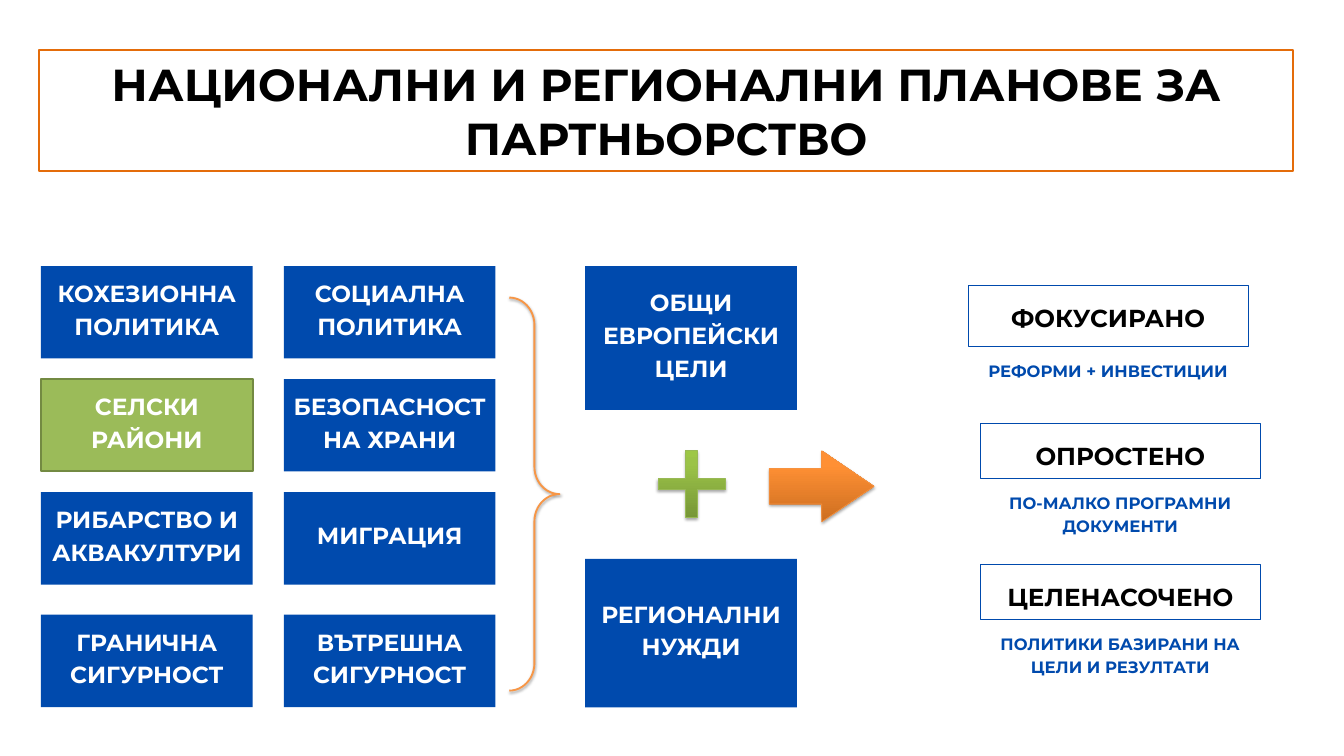
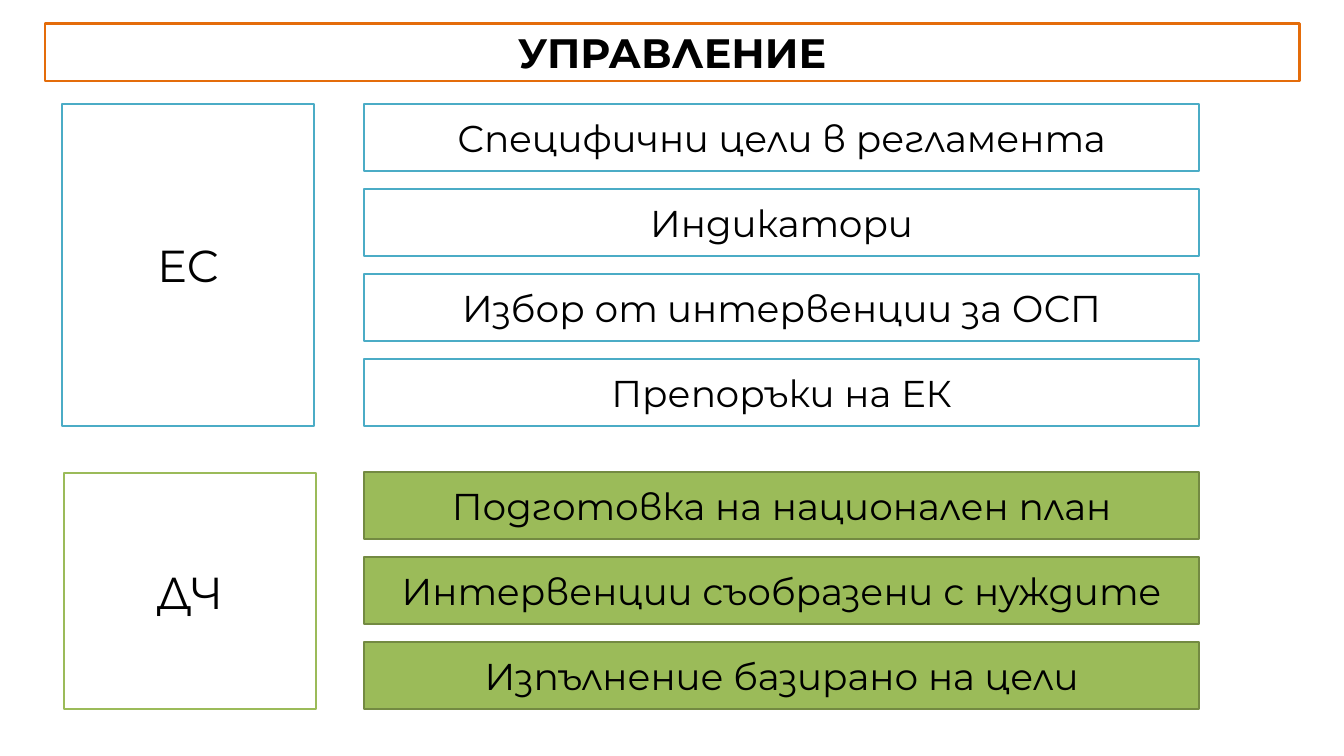
from copy import deepcopy
from dataclasses import dataclass
from typing import Optional

from lxml import etree
from pptx import Presentation
from pptx.dml.color import RGBColor
from pptx.enum import lang, shapes, text
from pptx.oxml.ns import qn
from pptx.util import Cm, Pt


@dataclass(frozen=True)
class TextStyle:
    size: float
    color: str = "000000"
    bold: bool = True
    spacing: Optional[float] = None


class Theme:
    font = "Montserrat"
    white, blue, teal = "FFFFFF", "004AAD", "4BACC6"
    green, dark_green = "9BBB59", "738A42"
    orange, title_border = "F79646", "E46C0A"
    plus_gradient, plus_border = ("779737", "9BC348", "9DC746"), "98B955"
    arrow_gradient, arrow_border = ("CC6E20", "FF9034", "FF9136"), "F69240"
    gradient_positions = (0, 0.8, 1)
    plans_title = TextStyle(48)
    management_title = TextStyle(44)
    policy = TextStyle(25, white, spacing=35)
    outcome = TextStyle(26.3, spacing=36.9)
    caption = TextStyle(17.6, blue, spacing=24.6)
    level = TextStyle(48, bold=False)
    task = TextStyle(40, bold=False)


# Lengths are in centimetres; a frame is left, top, width, height.
ENGLISH = lang.MSO_LANGUAGE_ID.ENGLISH_US
BULGARIAN = lang.MSO_LANGUAGE_ID.BULGARIAN

PLANS_TITLE = ("НАЦИОНАЛНИ И РЕГИОНАЛНИ ПЛАНОВЕ ЗА ПАРТНЬОРСТВО",
               (1.47, 1.9, 47.42, 4.57), Theme.plans_title)
POLICIES = [
    ("КОХЕЗИОННА ПОЛИТИКА", "СОЦИАЛНА ПОЛИТИКА"),
    ("СЕЛСКИ РАЙОНИ", "БЕЗОПАСНОСТ НА ХРАНИ"),
    ("РИБАРСТВО И АКВАКУЛТУРИ", "МИГРАЦИЯ"),
    ("ГРАНИЧНА СИГУРНОСТ", "ВЪТРЕШНА СИГУРНОСТ"),
]
HIGHLIGHTED_POLICY = "СЕЛСКИ РАЙОНИ"
POLICY_LEFT, POLICY_PITCH = 1.55, 9.18
POLICY_TOPS = (10.06, 14.33, 18.61, 23.24)
POLICY_WIDTH, POLICY_HEIGHT = 8, 3.49
POLICY_INSETS = (0.15, 0.15, 0.15, 0.54)

GOALS = [
    ("ОБЩИ ЕВРОПЕЙСКИ ЦЕЛИ", (22.12, 10.06, POLICY_WIDTH, 5.44)),
    ("РЕГИОНАЛНИ НУЖДИ", (22.12, 21.13, POLICY_WIDTH, 5.61)),
]
BRACE_FRAME = (19.25, 11.25, 1.9, 14.86)
PLUS_FRAME = (24.87, 17.04, 2.54, 2.51)
ARROW_FRAME = (29.08, 17.04, 3.96, 2.69)

OUTCOMES = [
    ("ФОКУСИРАНО", "РЕФОРМИ + ИНВЕСТИЦИИ", 36.6, 10.77, 2.34),
    ("ОПРОСТЕНО", "ПО-МАЛКО ПРОГРАМНИ ДОКУМЕНТИ", 37.06, 16, 2.08),
    ("ЦЕЛЕНАСОЧЕНО", "ПОЛИТИКИ БАЗИРАНИ НА ЦЕЛИ И РЕЗУЛТАТИ", 37.06, 21.34, 2.08),
]
OUTCOME_WIDTH, CAPTION_GAP, CAPTION_HEIGHT = 10.57, 0.43, 1.68

MANAGEMENT_TITLE = ("УПРАВЛЕНИЕ", (1.7, 0.89, 47.42, 2.18),
                    Theme.management_title)
LEVELS = [
    {
        "name": "ЕС", "frame": (2.34, 3.92, 9.53, 12.19), "border": Theme.teal,
        "tasks": ["Специфични цели в регламента", "Индикатори",
                  "Избор от интервенции за ОСП", "Препоръки на ЕК"],
        "task_top": 3.92, "task_fill": Theme.white, "task_border": Theme.teal,
    },
    {
        "name": "ДЧ", "frame": (2.41, 17.88, 9.53, 8.94), "border": Theme.green,
        "tasks": ["Подготовка на национален план",
                  "Интервенции съобразени с нуждите",
                  "Изпълнение базирано на цели"],
        "task_top": 17.84, "task_fill": Theme.green,
        "task_border": Theme.dark_green,
    },
]
TASK_LEFT, TASK_WIDTH, TASK_HEIGHT, TASK_PITCH = 13.77, 31.55, 2.54, 3.22


def rgb(color):
    return RGBColor.from_string(color)


def write(shape, wording, style, language, insets=None, anchor=text.MSO_ANCHOR.MIDDLE):
    """Fill a shape with one centred paragraph; insets run left, top, right, bottom."""
    frame = shape.text_frame
    frame.text = wording
    frame.word_wrap = True
    frame.auto_size = text.MSO_AUTO_SIZE.NONE
    frame.vertical_anchor = anchor
    if insets:
        (frame.margin_left, frame.margin_top,
         frame.margin_right, frame.margin_bottom) = map(Cm, insets)
    paragraph = frame.paragraphs[0]
    paragraph.alignment = text.PP_ALIGN.CENTER
    if style.spacing:
        paragraph.line_spacing = Pt(style.spacing)
    for run in paragraph.runs:
        run.font.name = Theme.font
        run.font.size = Pt(style.size)
        run.font.bold = style.bold
        run.font.color.rgb = rgb(style.color)
        run.font.language_id = language


def outline(shape, color, width):
    shape.line.color.rgb = rgb(color)
    shape.line.width = Pt(width)


def add_preset(slide, preset, frame, fill=None, border=None, width=2):
    shape = slide.shapes.add_shape(preset, *map(Cm, frame))
    shape.shadow.inherit = False
    if fill:
        shape.fill.solid()
        shape.fill.fore_color.rgb = rgb(fill)
    else:
        shape.fill.background()
    if border:
        outline(shape, border, width)
    else:
        shape.line.fill.background()
    return shape


def add_box(slide, frame, **look):
    return add_preset(slide, shapes.MSO_SHAPE.RECTANGLE, frame, **look)


def adjust(shape, *values):
    for index, value in enumerate(values):
        shape.adjustments[index] = value


def shade(shape, colors):
    """Apply a three-stop gradient that darkens downwards."""
    shape.fill.gradient()
    shape.fill.gradient_angle = 90
    stop_list = shape._element.spPr.find(".//" + qn("a:gsLst"))
    stop_list.append(deepcopy(stop_list[-1]))
    stops = shape.fill.gradient_stops
    for stop, color, position in zip(stops, colors, Theme.gradient_positions):
        stop.color.rgb = rgb(color)
        stop.position = position


def drop_shadow(shape, distance, opacity):
    effects = shape._element.spPr.find(qn("a:effectLst"))
    shadow = etree.SubElement(effects, qn("a:outerShdw"), blurRad="40000",
                              dist=str(Pt(distance)), dir="5400000", rotWithShape="0")
    color = etree.SubElement(shadow, qn("a:srgbClr"), val="000000")
    etree.SubElement(color, qn("a:alpha"), val=str(opacity * 1000))


def add_titled_slide(deck, title, language):
    wording, frame, style = title
    slide = deck.slides.add_slide(deck.slide_layouts[5])
    heading = slide.shapes.title
    heading.left, heading.top, heading.width, heading.height = map(Cm, frame)
    outline(heading, Theme.title_border, 2.25)
    write(heading, wording, style, language, (0, 0, 0, 0))
    return slide


def add_policy(slide, wording, frame):
    highlighted = wording == HIGHLIGHTED_POLICY
    box = add_box(slide, frame, fill=Theme.green if highlighted else Theme.blue,
                  border=Theme.dark_green if highlighted else None)
    write(box, wording, Theme.policy, ENGLISH, POLICY_INSETS)


def add_symbols(slide):
    brace = add_preset(slide, shapes.MSO_SHAPE.RIGHT_BRACE, BRACE_FRAME,
                       border=Theme.orange)
    adjust(brace, 0.544, 0.5)
    drop_shadow(brace, 1.6, 38)

    plus = add_preset(slide, shapes.MSO_SHAPE.CROSS, PLUS_FRAME,
                      border=Theme.plus_border, width=0.75)
    adjust(plus, 0.417)
    shade(plus, Theme.plus_gradient)

    arrow = add_preset(slide, shapes.MSO_SHAPE.RIGHT_ARROW, ARROW_FRAME,
                       border=Theme.arrow_border, width=0.75)
    adjust(arrow, 0.5, 0.736)
    shade(arrow, Theme.arrow_gradient)

    for symbol in (plus, arrow):
        drop_shadow(symbol, 1.8, 35)


def add_outcome(slide, name, caption, left, top, height):
    box = add_box(slide, (left, top, OUTCOME_WIDTH, height),
                  border=Theme.blue, width=0.75)
    write(box, name, Theme.outcome, ENGLISH, (0, 0.48, 0, 0), text.MSO_ANCHOR.TOP)
    note_frame = (left, top + height + CAPTION_GAP, OUTCOME_WIDTH, CAPTION_HEIGHT)
    note = slide.shapes.add_textbox(*map(Cm, note_frame))
    write(note, caption, Theme.caption, ENGLISH, (0, 0, 0, 0), text.MSO_ANCHOR.TOP)


def build_plans(deck):
    slide = add_titled_slide(deck, PLANS_TITLE, ENGLISH)
    for top, row in zip(POLICY_TOPS, POLICIES):
        for column, policy in enumerate(row):
            left = POLICY_LEFT + column * POLICY_PITCH
            add_policy(slide, policy, (left, top, POLICY_WIDTH, POLICY_HEIGHT))
    for goal, frame in GOALS:
        add_policy(slide, goal, frame)
    add_symbols(slide)
    for outcome in OUTCOMES:
        add_outcome(slide, *outcome)


def build_management(deck):
    slide = add_titled_slide(deck, MANAGEMENT_TITLE, BULGARIAN)
    for level in LEVELS:
        box = add_box(slide, level["frame"], fill=Theme.white, border=level["border"])
        write(box, level["name"], Theme.level, BULGARIAN)
        for row, task in enumerate(level["tasks"]):
            top = level["task_top"] + row * TASK_PITCH
            bar = add_box(slide, (TASK_LEFT, top, TASK_WIDTH, TASK_HEIGHT),
                          fill=level["task_fill"], border=level["task_border"])
            write(bar, task, Theme.task, BULGARIAN)


def main():
    deck = Presentation()
    deck.slide_width, deck.slide_height = Cm(50.8), Cm(28.58)
    build_plans(deck)
    build_management(deck)
    deck.save("out.pptx")


if __name__ == "__main__":
    main()
